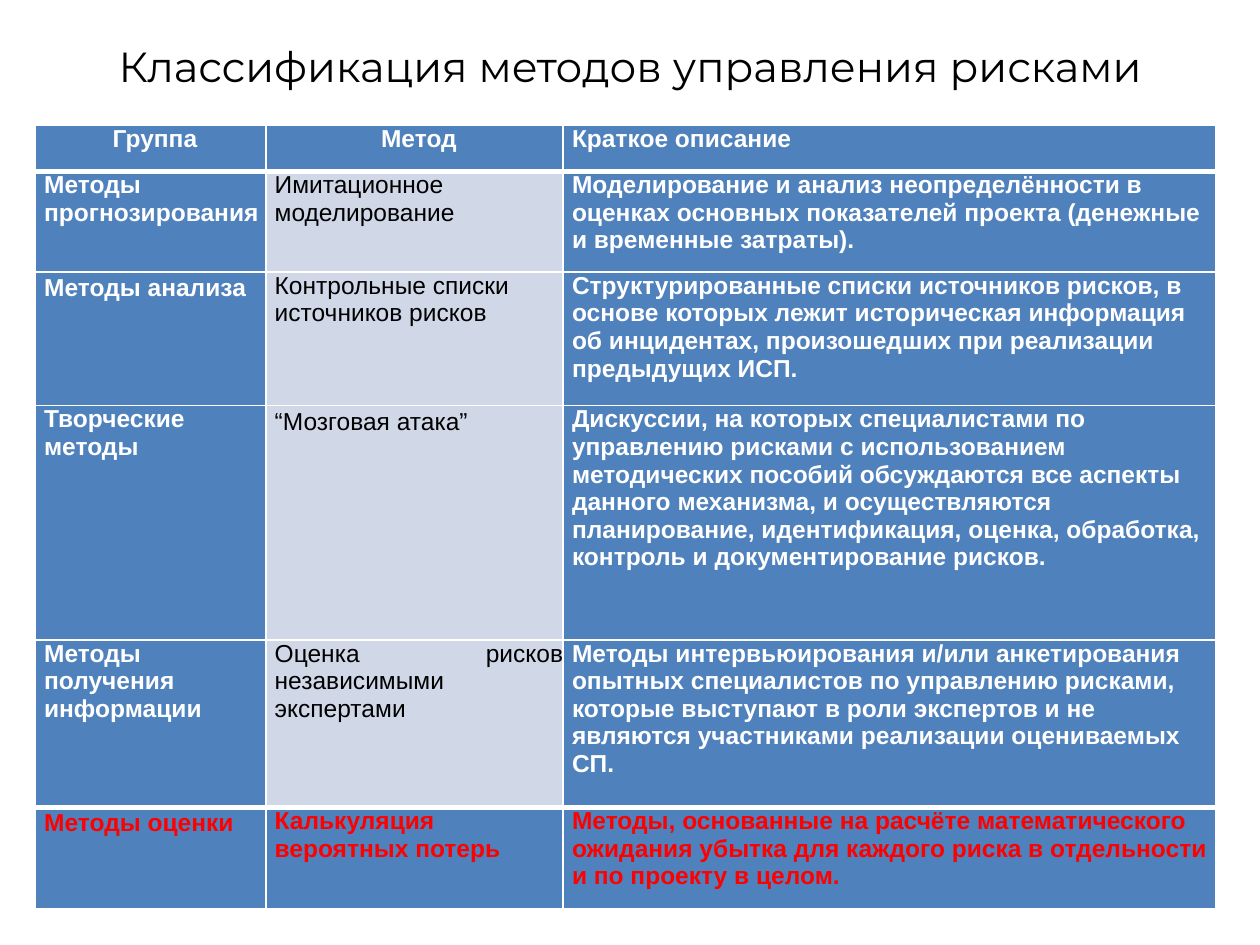
from lxml import etree
from pptx import Presentation
from pptx.dml.color import RGBColor
from pptx.enum.text import MSO_ANCHOR, PP_ALIGN
from pptx.oxml.ns import qn
from pptx.util import Inches, Pt

CENTER, LEFT, JUSTIFY = PP_ALIGN.CENTER, PP_ALIGN.LEFT, PP_ALIGN.JUSTIFY
MIDDLE = MSO_ANCHOR.MIDDLE
WHITE = RGBColor(0xFF, 0xFF, 0xFF)
BLACK = RGBColor(0, 0, 0)
RED = RGBColor(0xFF, 0, 0)
BLUE = RGBColor(0x4F, 0x81, 0xBD)
PALE = RGBColor(0xD0, 0xD8, 0xE8)

TITLE = "Классификация методов управления рисками"
TITLE_BOX = (0.5, 0.05, 9, 0.94)
TABLE_BOX = (0.28, 0.99, 9.37, 6.22)
COLS = (1.83, 2.36, 5.18)
ROWS = (0.37, 0.8, 1.06, 1.86, 1.33, 0.8)
DATA = (
    ("Группа", "Метод", "Краткое описание"),
    ("Методы прогнозирования", "Имитационное моделирование",
     "Моделирование и анализ неопределённости в оценках основных показателей "
     "проекта (денежные и временные затраты)."),
    ("Методы анализа", "Контрольные списки источников рисков",
     "Структурированные списки источников рисков, в основе которых лежит "
     "историческая информация об инцидентах, произошедших при реализации "
     "предыдущих ИСП."),
    ("Творческие методы", "“Мозговая атака”",
     "Дискуссии, на которых специалистами по управлению рисками с "
     "использованием методических пособий обсуждаются все аспекты данного "
     "механизма, и осуществляются планирование, идентификация, оценка, "
     "обработка, контроль и документирование рисков."),
    ("Методы получения информации", "Оценка рисков независимыми экспертами",
     "Методы интервьюирования и/или анкетирования опытных специалистов по "
     "управлению рисками, которые выступают в роли экспертов и не являются "
     "участниками реализации оцениваемых СП."),
    ("Методы оценки", "Калькуляция вероятных потерь",
     "Методы, основанные на расчёте математического ожидания убытка для "
     "каждого риска в отдельности и по проекту в целом."),
)
LAST = len(DATA) - 1
ALIGN = {(0, 0): CENTER, (0, 1): CENTER, (4, 1): JUSTIFY}
SPACING = {(2, 0): 16.8, (3, 1): 17.1, (LAST, 0): 16.8}


def add_title(slide, box):
    title = slide.shapes.title
    title.left, title.top, title.width, title.height = map(Inches, box)
    frame = title.text_frame
    frame.text = TITLE
    frame.vertical_anchor = MIDDLE
    para = frame.paragraphs[0]
    para.alignment = CENTER
    font = para.runs[0].font
    font.name, font.size, font.color.rgb = "Montserrat", Pt(24), BLACK


def set_edges(cell, row):
    """Draw white edges, thick below the header and above the last row."""
    top = 3 if row in (1, LAST) else 1
    base = 3 if row in (0, LAST - 1) else 1
    props = cell._tc.get_or_add_tcPr()
    for side, width in (("L", 1), ("R", 1), ("T", top), ("B", base)):
        line = etree.SubElement(props, qn(f"a:ln{side}"), w=str(Pt(width)))
        fill = etree.SubElement(line, qn("a:solidFill"))
        etree.SubElement(fill, qn("a:srgbClr"), val=str(WHITE))


def fill_cell(cell, row, col, text):
    plain = col == 1 and 0 < row < LAST
    set_edges(cell, row)
    cell.fill.solid()
    cell.fill.fore_color.rgb = PALE if plain else BLUE
    cell.margin_left = cell.margin_right = 0
    cell.margin_top = cell.margin_bottom = 0
    cell.text_frame.text = text
    para = cell.text_frame.paragraphs[0]
    para.alignment = ALIGN.get((row, col), LEFT)
    para._p.get_or_add_pPr().set("marL", str(Inches(0.07)))
    if (row, col) in SPACING:
        para.line_spacing = Pt(SPACING[row, col])
    font = para.runs[0].font
    font.name, font.size, font.bold = "Arial", Pt(14), not plain
    font.color.rgb = BLACK if plain else RED if row == LAST else WHITE


def add_methods(slide, box):
    frame = slide.shapes.add_table(len(ROWS), len(COLS), *map(Inches, box))
    table = frame.table
    for col, width in zip(table.columns, COLS):
        col.width = Inches(box[2] * width / sum(COLS))
    for row, height in zip(table.rows, ROWS):
        row.height = Inches(box[3] * height / sum(ROWS))
    for row, texts in enumerate(DATA):
        for col, text in enumerate(texts):
            fill_cell(table.cell(row, col), row, col, text)


def main():
    deck = Presentation()
    deck.slide_width, deck.slide_height = Inches(10), Inches(7.5)
    slide = deck.slides.add_slide(deck.slide_layouts[5])
    add_title(slide, TITLE_BOX)
    add_methods(slide, TABLE_BOX)
    deck.save("out.pptx")


if __name__ == "__main__":
    main()
